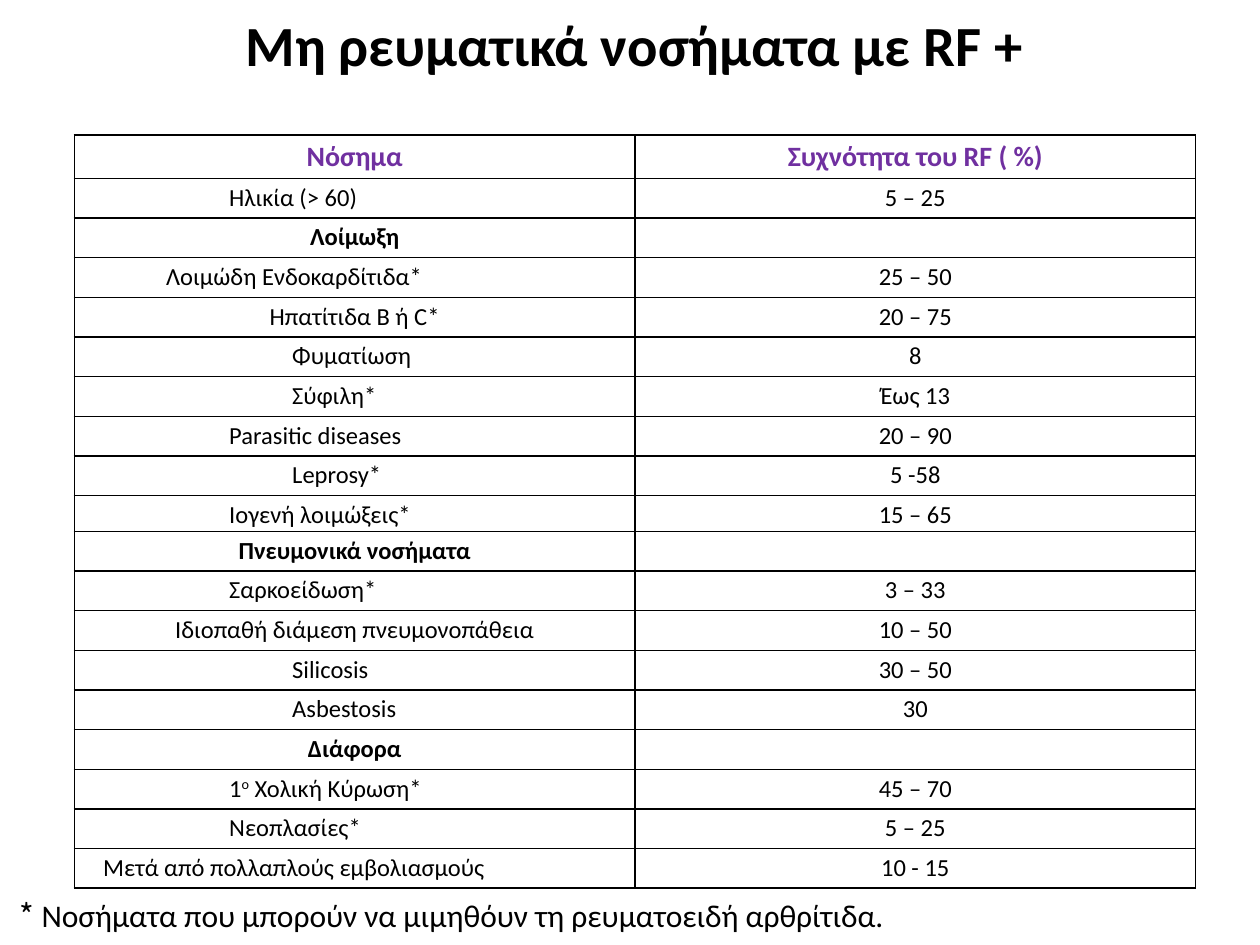
"""Build a slide tabulating non-rheumatic diseases with positive RF."""
import lxml.etree
import pptx
import pptx.dml.color
import pptx.enum.text
import pptx.oxml.ns
import pptx.util

Pt = pptx.util.Pt
ALIGN = pptx.enum.text.PP_ALIGN
THEME = {
    "font": "Calibri", "star_font": "Noto Sans CJK JP",
    "ink": "000000", "accent": "7030A0", "paper": "FFFFFF",
    "title": 32.4, "head": 16, "body": 14, "note": 18,
}
TITLE = "Μη ρευματικά νοσήματα με RF +"
HEADS = ("Νόσημα", "Συχνότητα του RF ( %)")
# name, frequency, indent level (None is centred)
DISEASES = [
    ("Ηλικία (> 60)", "5 – 25", 2),
    ("Λοίμωξη", "", None),
    ("Λοιμώδη Ενδοκαρδίτιδα*", "25 – 50", 1),
    ("Ηπατίτιδα B ή C*", "20 – 75", None),
    ("Φυματίωση", "8", 3),
    ("Σύφιλη*", "Έως 13", 3),
    ("Parasitic diseases", "20 – 90", 2),
    ("Leprosy*", "5 -58", 3),
    ("Ιογενή λοιμώξεις*", "15 – 65", 2),
    ("Πνευμονικά νοσήματα", "", None),
    ("Σαρκοείδωση*", "3 – 33", 2),
    ("Ιδιοπαθή διάμεση πνευμονοπάθεια", "10 – 50", None),
    ("Silicosis", "30 – 50", 3),
    ("Asbestosis", "30", 3),
    ("Διάφορα", "", None),
    (("1", "ο", " Χολική Κύρωση*"), "45 – 70", 2),
    ("Νεοπλασίες*", "5 – 25", 2),
    ("Μετά από πολλαπλούς εμβολιασμούς", "10 - 15", 0),
]
NOTE = ("* ", "Νοσήματα που μπορούν να μιμηθόυν τη ρευματοειδή αρθρίτιδα.")
LEFT, TOP, COL_W = 42.5, 77.1, 320.4
HEAD_H, ROW_H, SHORT_H, SHORT_ROW = 24.9, 22.66, 20.5, 9
INDENT, STEP = 11.5, 36


def add_run(p, text, size, color="ink", bold=False, font="font"):
    """Append one styled run."""
    r = p.add_run()
    r.text = text
    r.font.size, r.font.bold, r.font.name = Pt(size), bold, THEME[font]
    r.font.color.rgb = pptx.dml.color.RGBColor.from_string(THEME[color])
    return r


def add_box(s, x, y, w, h, inset=7.2):
    """Add a wrapping text box and return its first paragraph."""
    tf = s.shapes.add_textbox(Pt(x), Pt(y), Pt(w), Pt(h)).text_frame
    tf.word_wrap, tf.margin_left = True, Pt(inset)
    return tf.paragraphs[0]


def style_cell(cell):
    """Give a cell thin borders, a plain fill and tight margins."""
    tcPr = cell._tc.get_or_add_tcPr()
    qn = pptx.oxml.ns.qn
    for side in ("lnL", "lnR", "lnT", "lnB"):
        ln = lxml.etree.SubElement(tcPr, qn("a:" + side), w=str(Pt(1)))
        fill = lxml.etree.SubElement(ln, qn("a:solidFill"))
        lxml.etree.SubElement(fill, qn("a:srgbClr"), val=THEME["ink"])
    cell.fill.solid()
    cell.fill.fore_color.rgb = pptx.dml.color.RGBColor.from_string(THEME["paper"])
    cell.margin_left = cell.margin_right = Pt(5)
    cell.margin_top = cell.margin_bottom = 0


def fill_cell(cell, text, level=None, size=THEME["body"], color="ink", bold=False):
    """Write a cell, centred or indented by level."""
    style_cell(cell)
    if not text:
        return
    p = cell.text_frame.paragraphs[0]
    p.line_spacing = 1.15
    p.alignment = ALIGN.CENTER if level is None else ALIGN.LEFT
    if level is not None:
        p._p.get_or_add_pPr().set("marL", str(Pt(INDENT + STEP * level)))
    parts = (text,) if isinstance(text, str) else text
    for i, part in enumerate(parts):
        r = add_run(p, part, size, color, bold)
        if i == 1:
            r.font._element.set("baseline", "30000")


def add_disease_table(s):
    """Add the table of diseases and RF frequencies."""
    heights = [HEAD_H] + [ROW_H] * len(DISEASES)
    heights[SHORT_ROW] = SHORT_H
    table = s.shapes.add_table(len(heights), 2, Pt(LEFT), Pt(TOP),
                               Pt(2 * COL_W), Pt(sum(heights))).table
    table.first_row = table.horz_banding = False
    for col in table.columns:
        col.width = Pt(COL_W)
    for row, height in zip(table.rows, heights):
        row.height = Pt(height)
    for c, head in enumerate(HEADS):
        fill_cell(table.cell(0, c), head, None, THEME["head"], "accent", True)
    for i, (name, frequency, level) in enumerate(DISEASES, 1):
        fill_cell(table.cell(i, 0), name, level, bold=not frequency)
        fill_cell(table.cell(i, 1), frequency)


def main():
    """Build and save the slide."""
    prs = pptx.Presentation()
    prs.slide_width, prs.slide_height = Pt(720), Pt(540)
    s = prs.slides.add_slide(prs.slide_layouts[6])
    p = add_box(s, 112.3, 2, 500.4, 66)
    p.alignment = ALIGN.CENTER
    add_run(p, TITLE, THEME["title"], bold=True)
    add_disease_table(s)
    p = add_box(s, 0, 508.3, 720, 31.7, inset=11.3)
    for text, font in zip(NOTE, ("star_font", "font")):
        add_run(p, text, THEME["note"], font=font)
    prs.save("out.pptx")


if __name__ == "__main__":
    main()
